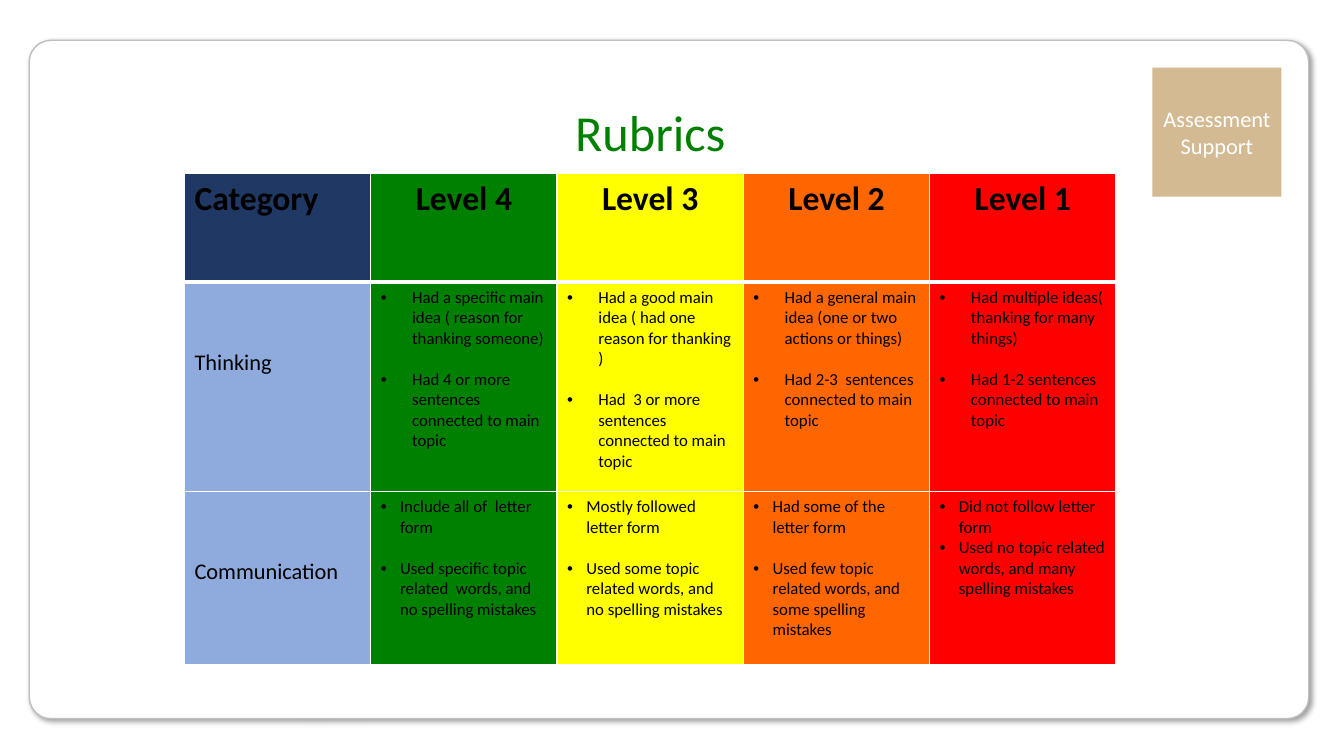
from dataclasses import dataclass

from lxml import etree
from pptx import Presentation
from pptx.dml.color import RGBColor
from pptx.enum import shapes, text
from pptx.oxml import ns
from pptx.util import Inches, Pt


@dataclass(frozen=True)
class Theme:
    font: str = "Calibri"
    ink: str = "000000"
    white: str = "FFFFFF"
    edge: str = "BFBFBF"
    badge: str = "D3BA92"
    title: str = "008000"
    corner: str = "203864"
    label: str = "8FAADC"
    levels: tuple = ("008000", "FFFF00", "FF6600", "FF0000")
    title_size: int = 36
    head_size: int = 24
    label_size: int = 16
    body_size: int = 12


LEVELS = ["Level 4", "Level 3", "Level 2", "Level 1"]

# Each row: label, height, bullet indent, bullets for every level
CRITERIA = [
    ("Thinking", 2.08, 0.31, [
        ("Had a specific main idea ( reason for thanking someone)",
         "Had 4 or more sentences connected to main topic"),
        ("Had a good main idea ( had one reason for thanking )",
         "Had  3 or more sentences connected to main topic"),
        ("Had a general main idea (one or two actions or things)",
         "Had 2-3  sentences connected to main topic"),
        ("Had multiple ideas( thanking for many things)",
         "Had 1-2 sentences connected to main topic"),
    ]),
    ("Communication", 1.71, 0.19, [
        ("Include all of  letter form",
         "Used specific topic related  words, and no spelling mistakes"),
        ("Mostly followed letter form",
         "Used some topic related words, and no spelling mistakes"),
        ("Had some of the letter form",
         "Used few topic related words, and some spelling mistakes"),
        ("Did not follow letter form",
         "Used no topic related words, and many spelling mistakes"),
    ]),
]


def add_xml(parent, tag, **attrs):
    return etree.SubElement(parent, ns.qn(tag), {k: str(v) for k, v in attrs.items()})


def write(tf, *lines, font, size, color, bold=False, align=None, indent=0, gap=0):
    """Fill a text frame with one paragraph per line; an indent adds bullets."""
    for i, line in enumerate(lines):
        p = tf.add_paragraph() if i else tf.paragraphs[0]
        if align is not None:
            p.alignment = align
        if i and gap:
            p.space_before = Pt(gap)
        if indent:
            pPr = p._p.get_or_add_pPr()
            pPr.set("marL", str(Inches(indent)))
            pPr.set("indent", str(-Inches(indent)))
            add_xml(pPr, "a:buFont", typeface="Arial")
            add_xml(pPr, "a:buChar", char="•")
        r = p.add_run()
        r.text = line
        r.font.name, r.font.size, r.font.bold = font, Pt(size), bold
        r.font.color.rgb = RGBColor.from_string(color)


class RubricSlide:
    def __init__(self, prs, theme):
        self.theme = theme
        self.s = prs.slides.add_slide(prs.slide_layouts[5])

    def shape(self, kind, box, fill, line=None):
        sp = self.s.shapes.add_shape(kind, *map(Inches, box))
        sp.shadow.inherit = False
        sp.fill.solid()
        sp.fill.fore_color.rgb = RGBColor.from_string(fill)
        if line:
            sp.line.color.rgb = RGBColor.from_string(line)
            sp.line.width = Pt(1)
        else:
            sp.line.fill.background()
        return sp

    def panel(self, box):
        t = self.theme
        sp = self.shape(shapes.MSO_SHAPE.ROUNDED_RECTANGLE, box, t.white, t.edge)
        sp.adjustments[0] = 0.032
        effects = sp.element.spPr.find(ns.qn("a:effectLst"))
        shadow = add_xml(effects, "a:outerShdw", blurRad=Pt(4), dist=Pt(3),
                         dir=45 * 60000, algn="tl", rotWithShape=0)
        add_xml(add_xml(shadow, "a:srgbClr", val=t.ink), "a:alpha", val=40000)
        # The panel lies behind the title
        self.s.shapes.title.element.addprevious(sp.element)

    def badge(self, label, box):
        t = self.theme
        sp = self.shape(shapes.MSO_SHAPE.RECTANGLE, box, t.badge)
        sp.text_frame.word_wrap = True
        sp.text_frame.vertical_anchor = text.MSO_ANCHOR.MIDDLE
        write(sp.text_frame, label, font=t.font, size=t.label_size,
              color=t.white, align=text.PP_ALIGN.CENTER)

    def title(self, label, box):
        t, sp = self.theme, self.s.shapes.title
        sp.left, sp.top, sp.width, sp.height = map(Inches, box)
        tf = sp.text_frame
        tf.word_wrap = True
        tf.vertical_anchor = text.MSO_ANCHOR.TOP
        tf.auto_size = text.MSO_AUTO_SIZE.SHAPE_TO_FIT_TEXT
        write(tf, label, font=t.font, size=t.title_size, color=t.title,
              align=text.PP_ALIGN.CENTER)

    def cell(self, cell, fill, *lines, top=1, bottom=1, **fmt):
        t = self.theme
        cell.fill.solid()
        cell.fill.fore_color.rgb = RGBColor.from_string(fill)
        # Borders come before the fill in the cell properties
        tcPr = cell._tc.get_or_add_tcPr()
        for i, (side, width) in enumerate(zip("LRTB", (1, 1, top, bottom))):
            ln = add_xml(tcPr, "a:ln" + side, w=Pt(width))
            add_xml(add_xml(ln, "a:solidFill"), "a:srgbClr", val=t.white)
            tcPr.insert(i, ln)
        write(cell.text_frame, *lines, font=t.font, color=t.ink, **fmt)

    def rubric(self, box, head_height):
        t = self.theme
        table = self.s.shapes.add_table(len(CRITERIA) + 1, len(LEVELS) + 1,
                                        *map(Inches, box)).table
        table.first_row = table.horz_banding = False
        for col in table.columns:
            col.width = Inches(box[2] / (len(LEVELS) + 1))

        # Header row
        table.rows[0].height = Inches(head_height)
        head = dict(size=t.head_size, bold=True, bottom=3)
        self.cell(table.cell(0, 0), t.corner, "Category", **head)
        for c, (level, fill) in enumerate(zip(LEVELS, t.levels), 1):
            self.cell(table.cell(0, c), fill, level,
                      align=text.PP_ALIGN.CENTER, **head)

        # Criteria rows
        for r, (label, height, indent, entries) in enumerate(CRITERIA, 1):
            table.rows[r].height = Inches(height)
            top = 3 if r == 1 else 1
            name = table.cell(r, 0)
            self.cell(name, t.label, label, size=t.label_size, top=top)
            name.margin_top = Inches(0.66)
            for c, (bullets, fill) in enumerate(zip(entries, t.levels), 1):
                tight = label == "Communication" and c == len(LEVELS)
                self.cell(table.cell(r, c), fill, *bullets, size=t.body_size,
                          top=top, indent=indent, gap=0 if tight else 14.65)


def main():
    prs = Presentation()
    prs.slide_width, prs.slide_height = Inches(13.33), Inches(7.5)
    slide = RubricSlide(prs, Theme())
    slide.panel((0.29, 0.4, 12.69, 6.73))
    slide.title("Rubrics", (1.83, 0.95, 9.24, 0.71))
    slide.badge("Assessment Support", (11.43, 0.67, 1.28, 1.28))
    slide.rubric((1.83, 1.72, 9.24, 4.87), head_height=1.08)
    prs.save("out.pptx")


if __name__ == "__main__":
    main()
